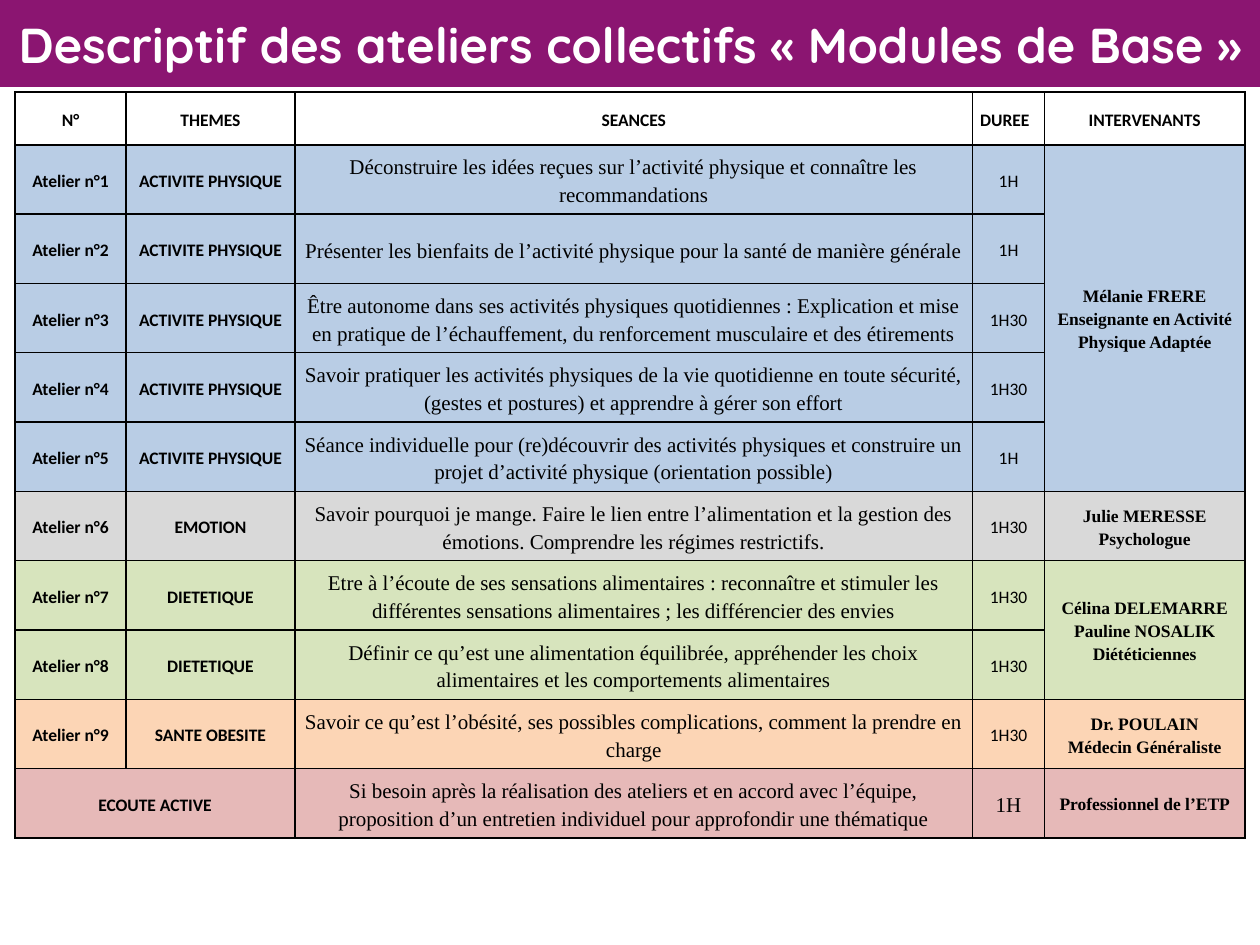
from lxml.etree import SubElement
from pptx import Presentation
from pptx.dml.color import RGBColor
from pptx.enum.shapes import MSO_SHAPE
from pptx.enum.text import MSO_ANCHOR, PP_ALIGN
from pptx.oxml.ns import qn
from pptx.util import Inches, Pt

BLUE, GREY, GREEN = "B9CDE5", "D9D9D9", "D7E4BD"
PEACH, ROSE = "FCD5B5", "E6B9B8"
SPORT, DIET = "ACTIVITE PHYSIQUE", "DIETETIQUE"
HEADS = ["N°", "THEMES", "SEANCES", "DUREE", "INTERVENANTS"]
COLS = [0.88, 1.34, 5.38, 0.57, 1.59]
ROWS = [0.42] + [0.55] * 10

# theme, session, length, fill
SESSIONS = [
    (SPORT, "Déconstruire les idées reçues sur l’activité physique et "
     "connaître les recommandations", "1H", BLUE),
    (SPORT, "Présenter les bienfaits de l’activité physique pour la santé "
     "de manière générale", "1H", BLUE),
    (SPORT, "Être autonome dans ses activités physiques quotidiennes : "
     "Explication et mise en pratique de l’échauffement, du renforcement "
     "musculaire et des étirements", "1H30", BLUE),
    (SPORT, "Savoir pratiquer les activités physiques de la vie quotidienne "
     "en toute sécurité, (gestes et postures) et apprendre à gérer son "
     "effort", "1H30", BLUE),
    (SPORT, "Séance individuelle pour (re)découvrir des activités physiques "
     "et construire un projet d’activité physique (orientation possible)",
     "1H", BLUE),
    ("EMOTION", "Savoir pourquoi je mange. Faire le lien entre "
     "l’alimentation et la gestion des émotions. Comprendre les régimes "
     "restrictifs.", "1H30", GREY),
    (DIET, "Etre à l’écoute de ses sensations alimentaires : reconnaître et "
     "stimuler les différentes sensations alimentaires ; les différencier "
     "des envies", "1H30", GREEN),
    (DIET, "Définir ce qu’est une alimentation équilibrée, appréhender les "
     "choix alimentaires et les comportements alimentaires", "1H30", GREEN),
    ("SANTE OBESITE", "Savoir ce qu’est l’obésité, ses possibles "
     "complications, comment la prendre en charge", "1H30", PEACH),
    ("", "Si besoin après la réalisation des ateliers et en accord avec "
     "l’équipe, proposition d’un entretien individuel pour approfondir une "
     "thématique", "1H", ROSE),
]
# first row, last row, lines
STAFF = [
    (1, 5, ["Mélanie FRERE", "Enseignante en Activité Physique Adaptée"]),
    (6, 6, ["Julie MERESSE", "Psychologue"]),
    (7, 8, ["Célina DELEMARRE", "Pauline NOSALIK", "Diététiciennes"]),
    (9, 9, ["Dr. POULAIN", "Médecin Généraliste"]),
    (10, 10, ["Professionnel de l’ETP"]),
]


def paint(color, tint):
    color.rgb = RGBColor.from_string(tint)


class Deck:
    sans, serif, head = "Calibri", "Times New Roman", "Quicksand"
    ink, plum, white = "000000", "8B1571", "FFFFFF"

    def __init__(self):
        self.prs = Presentation()
        self.prs.slide_width = Inches(10)
        self.prs.slide_height = Inches(7.5)
        self.slide = self.prs.slides.add_slide(self.prs.slide_layouts[6])

    def add_text(self, frame, lines, font, size, bold, tint,
                 align=PP_ALIGN.CENTER, space=None):
        for i, line in enumerate(lines):
            para = frame.paragraphs[0] if i == 0 else frame.add_paragraph()
            para.alignment = align
            para.line_spacing = space
            run = para.add_run()
            run.text = line
            run.font.name, run.font.size = font, Pt(size)
            run.font.bold = bold
            paint(run.font.color, tint)

    def banner(self, text, height):
        bar = self.slide.shapes.add_shape(
            MSO_SHAPE.RECTANGLE, 0, 0, Inches(10), Inches(height))
        bar.shadow.inherit = False
        bar.fill.solid()
        paint(bar.fill.fore_color, self.plum)
        bar.line.fill.background()
        frame = bar.text_frame
        frame.word_wrap = True
        frame.vertical_anchor = MSO_ANCHOR.MIDDLE
        frame.margin_left = frame.margin_right = Inches(0.1)
        self.add_text(frame, [text], self.head, 28, True, self.white)

    def grid(self, left, top, cols, rows):
        table = self.slide.shapes.add_table(
            len(rows), len(cols), Inches(left), Inches(top),
            Inches(sum(cols)), Inches(sum(rows))).table
        table.first_row = table.horz_banding = False
        for col, width in zip(table.columns, cols):
            col.width = Inches(width)
        for row, height in zip(table.rows, rows):
            row.height = Inches(height)
        return table

    def style(self, cell, tint):
        """Set borders, margins and fill of a cell."""
        cell.margin_left = cell.margin_right = Inches(0.06)
        cell.margin_top = cell.margin_bottom = 0
        cell.vertical_anchor = MSO_ANCHOR.MIDDLE
        props = cell._tc.get_or_add_tcPr()
        for side in ("a:lnL", "a:lnR", "a:lnT", "a:lnB"):
            line = SubElement(props, qn(side), w=str(Pt(1)))
            fill = SubElement(line, qn("a:solidFill"))
            SubElement(fill, qn("a:srgbClr"), val=self.ink)
        cell.fill.solid()
        paint(cell.fill.fore_color, tint)

    def label(self, cell, lines, font=sans, size=10, bold=True,
              align=PP_ALIGN.CENTER):
        self.add_text(cell.text_frame, lines, font, size, bold, self.ink,
                      align, 1.19)


def main():
    deck = Deck()
    deck.banner("Descriptif des ateliers collectifs « Modules de Base »", 0.69)
    table = deck.grid(0.12, 0.73, COLS, ROWS)
    tints = [deck.white] + [item[3] for item in SESSIONS]
    for r, tint in enumerate(tints):
        for c in range(len(COLS)):
            deck.style(table.cell(r, c), tint)

    for c, head in enumerate(HEADS):
        align = PP_ALIGN.LEFT if head == "DUREE" else PP_ALIGN.CENTER
        deck.label(table.cell(0, c), [head], align=align)

    last = len(SESSIONS)
    for r, (theme, topic, time, _) in enumerate(SESSIONS, 1):
        if r < last:
            deck.label(table.cell(r, 0), [f"Atelier n°{r}"])
            deck.label(table.cell(r, 1), [theme])
        deck.label(table.cell(r, 2), [topic], deck.serif, 12, False)
        font, size = (deck.serif, 12) if r == last else (deck.sans, 10)
        deck.label(table.cell(r, 3), [time], font, size, False)

    table.cell(last, 0).merge(table.cell(last, 1))
    deck.label(table.cell(last, 0), ["ECOUTE ACTIVE"])
    for first, end, lines in STAFF:
        cell = table.cell(first, 4)
        if end > first:
            cell.merge(table.cell(end, 4))
        deck.label(cell, lines, deck.serif)
    deck.prs.save("out.pptx")


if __name__ == "__main__":
    main()
